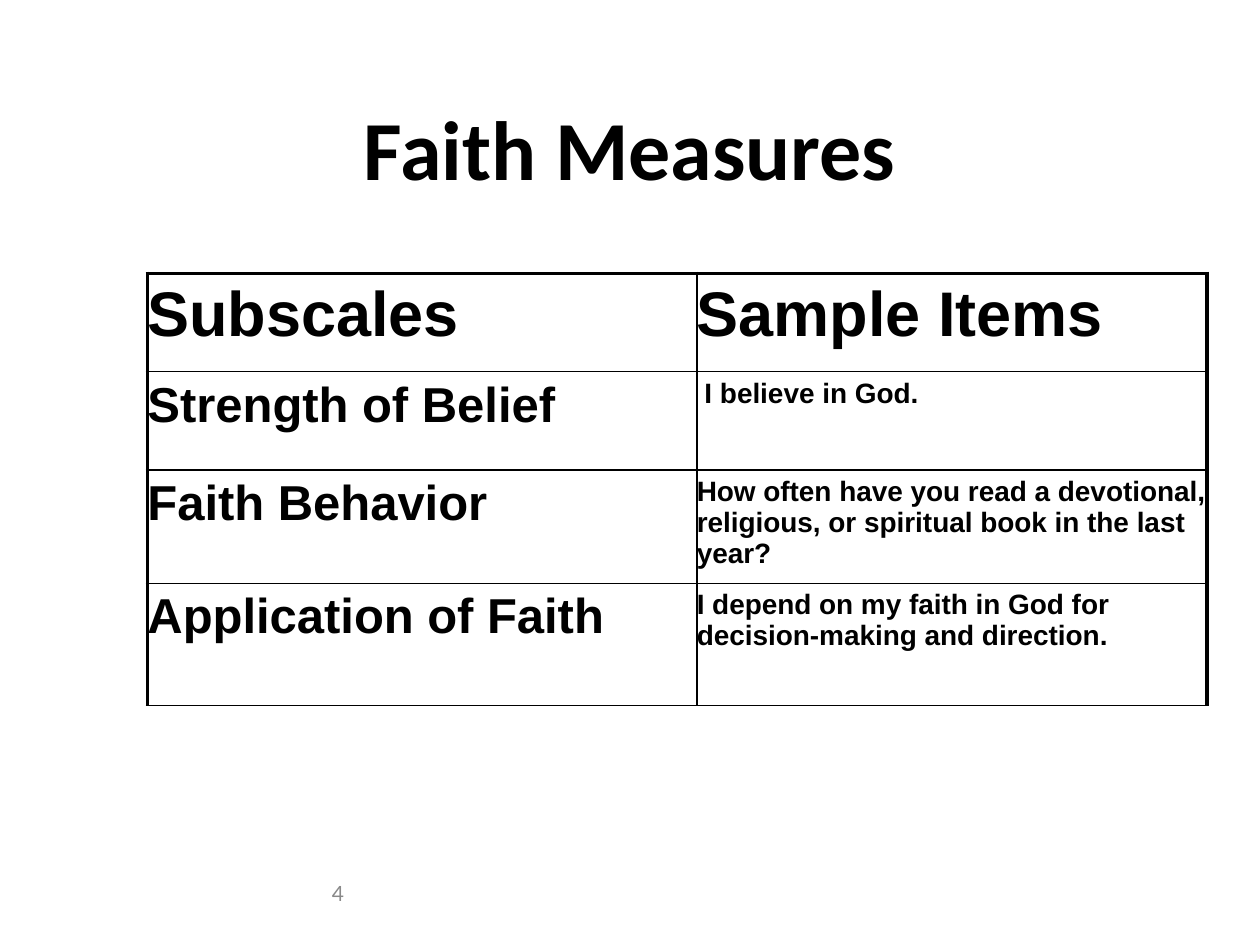
"""Build the Faith Measures slide with its table of subscales."""
from lxml.etree import SubElement
from pptx import Presentation
from pptx.dml.color import RGBColor
from pptx.enum.text import MSO_ANCHOR, PP_ALIGN
from pptx.oxml.ns import qn
from pptx.util import Inches, Pt

BLACK = RGBColor(0x00, 0x00, 0x00)
GRAY = RGBColor(0x89, 0x89, 0x89)
THIN, THICK = Pt(1), Pt(2.25)

COLUMN_WIDTHS = (4.36, 4.05)
ROW_HEIGHTS = (0.78, 0.78, 0.9, 0.97)
MEASURES = (
    ("Subscales", "Sample Items"),
    ("Strength of Belief", " I believe in God."),
    ("Faith Behavior", "How often have you read a devotional, religious, "
                       "or spiritual book in the last year?"),
    ("Application of Faith", "I depend on my faith in God for "
                             "decision-making and direction."),
)
HEADER_SIZE, SUBSCALE_SIZE, ITEM_SIZE = 36, 28, 16


def write_text(frame, text, color, **formats):
    """Write one formatted span into a text frame and return its paragraph."""
    paragraph = frame.paragraphs[0]
    span = paragraph.add_run()
    span.text = text
    span.font.color.rgb = color
    for name, value in formats.items():
        setattr(span.font, name, value)
    return paragraph


def add_text(page, place, text, alignment, color, **formats):
    """Add a vertically centred text box."""
    box = page.shapes.add_textbox(*map(Inches, place))
    frame = box.text_frame
    frame.word_wrap = True
    frame.vertical_anchor = MSO_ANCHOR.MIDDLE
    write_text(frame, text, color, **formats).alignment = alignment


def set_borders(cell, widths):
    """Draw solid black cell borders in left, right, top, bottom order."""
    properties = cell._tc.get_or_add_tcPr()
    for index, (side, width) in enumerate(zip("LRTB", widths)):
        line = SubElement(properties, qn(f"a:ln{side}"), w=str(width))
        fill = SubElement(line, qn("a:solidFill"))
        SubElement(fill, qn("a:srgbClr"), val=str(BLACK))
        properties.insert(index, line)


def fill_cell(cell, text, row, column):
    """Format one table cell according to its position."""
    for side in ("left", "right"):
        setattr(cell, f"margin_{side}", 0)
    cell.fill.background()
    size = HEADER_SIZE if row == 0 else (SUBSCALE_SIZE, ITEM_SIZE)[column]
    write_text(cell.text_frame, text, BLACK, name="Arial", size=Pt(size), bold=True)
    last_column = len(COLUMN_WIDTHS) - 1
    set_borders(cell, (
        THICK if column == 0 else THIN,
        THICK if column == last_column else THIN,
        THICK if row == 0 else THIN,
        THIN,
    ))


def add_measures_table(page, left, top):
    """Add the table of subscales and sample items."""
    table = page.shapes.add_table(
        len(ROW_HEIGHTS), len(COLUMN_WIDTHS), Inches(left), Inches(top),
        Inches(sum(COLUMN_WIDTHS)), Inches(sum(ROW_HEIGHTS))).table
    table.first_row = table.horz_banding = False
    for column, width in zip(table.columns, COLUMN_WIDTHS):
        column.width = Inches(width)
    for row, height in zip(table.rows, ROW_HEIGHTS):
        row.height = Inches(height)
    for row, texts in enumerate(MEASURES):
        for column, text in enumerate(texts):
            fill_cell(table.cell(row, column), text, row, column)


def main():
    """Build and save the deck."""
    deck = Presentation()
    deck.slide_width, deck.slide_height = Inches(10), Inches(7.5)
    page = deck.slides.add_slide(deck.slide_layouts[6])
    add_text(page, (0.5, 0.75, 9, 0.83), "Faith Measures", PP_ALIGN.CENTER,
             BLACK, name="Calibri", size=Pt(48), bold=True)
    add_measures_table(page, 1.17, 2.17)
    add_text(page, (0.5, 6.83, 2.33, 0.52), "4", PP_ALIGN.RIGHT,
             GRAY, name="Lato", size=Pt(12))
    deck.save("out.pptx")


if __name__ == "__main__":
    main()
